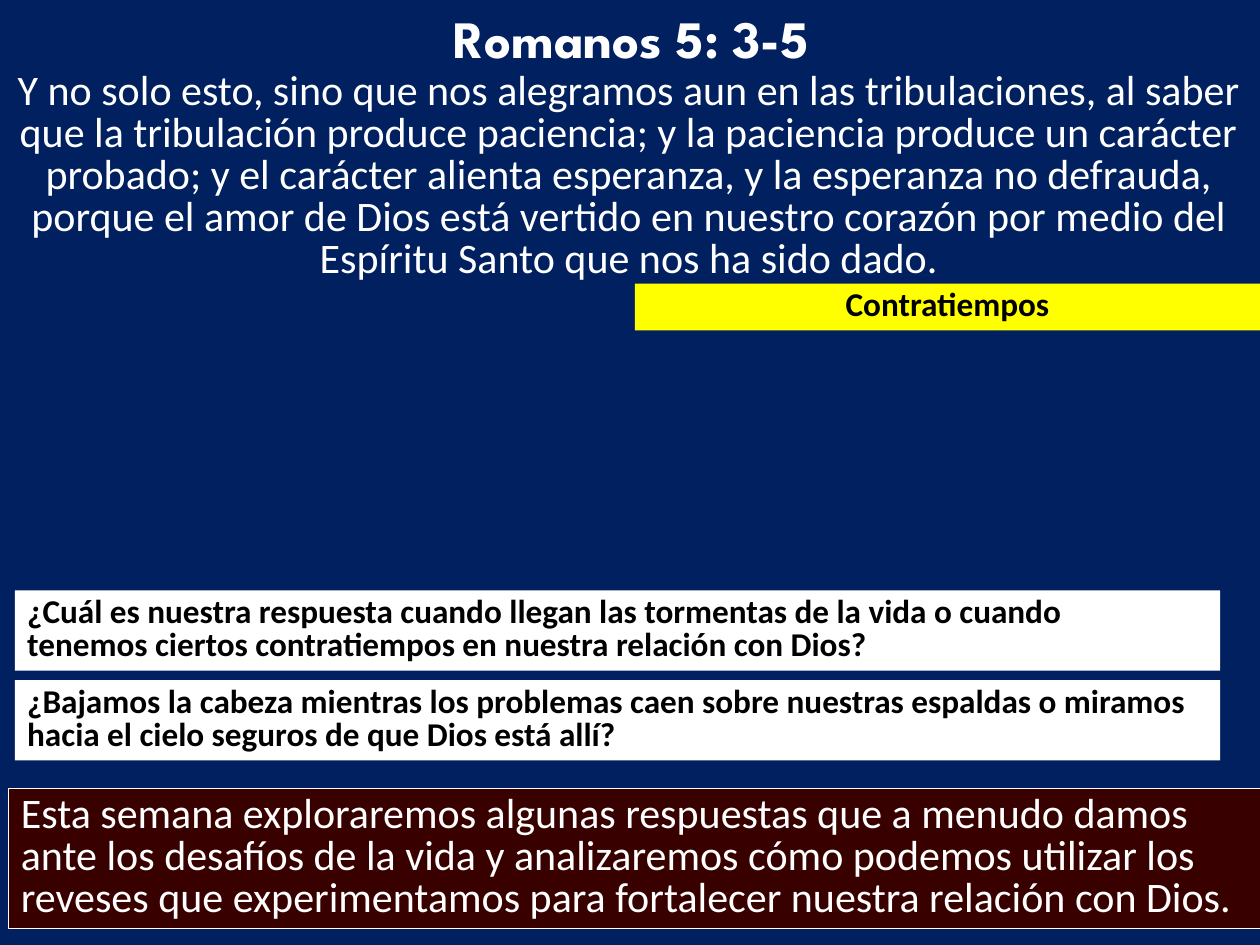
from pptx import Presentation
from pptx.dml.color import RGBColor
from pptx.enum.shapes import MSO_SHAPE
from pptx.enum.text import MSO_ANCHOR, MSO_AUTO_SIZE, PP_ALIGN
from pptx.oxml.ns import qn
from pptx.util import Cm, Pt
from lxml.etree import SubElement

NAVY = RGBColor(0x00, 0x20, 0x60)
WHITE = RGBColor(0xFF, 0xFF, 0xFF)
BLACK = RGBColor(0x00, 0x00, 0x00)
YELLOW = RGBColor(0xFF, 0xFF, 0x00)
MAROON = RGBColor(0x39, 0x00, 0x00)

HEADING = dict(name="League Spartan", size=Pt(30), bold=True, color=WHITE)
READING = dict(name="Calibri", size=Pt(24), bold=False, color=WHITE)
LABEL = dict(name="Calibri", size=Pt(19), bold=True, color=BLACK)

VERSE = [
    "Y no solo esto, sino que nos alegramos aun en las tribulaciones, al saber",
    "que la tribulación produce paciencia; y la paciencia produce un carácter "
    "probado; y el carácter alienta esperanza, y la esperanza no defrauda, "
    "porque el amor de Dios está vertido en nuestro corazón por medio del "
    "Espíritu Santo que nos ha sido dado.",
]
SUMMARY = [
    "Esta semana exploraremos algunas respuestas que a menudo damos ante los "
    "desafíos de la vida y analizaremos cómo podemos utilizar los reveses que "
    "experimentamos para fortalecer nuestra relación con Dios.",
]
QUESTIONS = [
    ["¿Cuál es nuestra respuesta cuando llegan las tormentas de la vida o cuando",
     "tenemos ciertos contratiempos en nuestra relación con Dios?"],
    ["¿Bajamos la cabeza mientras los problemas caen sobre nuestras espaldas o "
     "miramos hacia el cielo seguros de que Dios está allí?"],
]


class VerseSlide:
    def __init__(self, prs, background):
        self.s = prs.slides.add_slide(prs.slide_layouts[1])
        fill = self.s.background.fill
        fill.solid()
        fill.fore_color.rgb = background

    def set_text(self, sp, lines, style, align, spacing=None):
        tf = sp.text_frame
        frame = dict(word_wrap=True, vertical_anchor=MSO_ANCHOR.TOP,
                     auto_size=MSO_AUTO_SIZE.SHAPE_TO_FIT_TEXT,
                     margin_left=Cm(0.25), margin_right=Cm(0.25),
                     margin_top=Cm(0.13), margin_bottom=Cm(0.13))
        for key, value in frame.items():
            setattr(tf, key, value)
        for i, line in enumerate(lines):
            p = tf.paragraphs[0] if i == 0 else tf.add_paragraph()
            for key, value in dict(alignment=align, space_before=Pt(0),
                                   line_spacing=spacing).items():
                setattr(p, key, value)
            r = p.add_run()
            r.text = line
            for key, value in style.items():
                if key == "color":
                    r.font.color.rgb = value
                else:
                    setattr(r.font, key, value)

    def place(self, sp, box):
        for key, value in zip(("left", "top", "width", "height"), box):
            setattr(sp, key, Cm(value))

    def title(self, text, box):
        sp = self.s.shapes.title
        self.place(sp, box)
        self.set_text(sp, [text], HEADING, PP_ALIGN.CENTER)

    def body(self, lines, box):
        sp = self.s.placeholders[1]
        self.place(sp, box)
        self.set_text(sp, lines, READING, PP_ALIGN.CENTER, READING["size"])
        for p in sp.text_frame.paragraphs:
            pPr = p._p.get_or_add_pPr()
            pPr.set("marL", "0")
            pPr.set("indent", "0")
            SubElement(pPr, qn("a:buNone"))

    def panel(self, lines, box, fill, style, align=PP_ALIGN.LEFT, line=None):
        sp = self.s.shapes.add_shape(MSO_SHAPE.RECTANGLE, *map(Cm, box))
        sp.shadow.inherit = False
        sp.fill.solid()
        sp.fill.fore_color.rgb = fill
        if line is None:
            sp.line.fill.background()
        else:
            sp.line.color.rgb = line
            sp.line.width = Pt(0.75)
        self.set_text(sp, lines, style, align, style["size"])


def main():
    prs = Presentation()
    prs.slide_width, prs.slide_height = Cm(25.4), Cm(19.05)
    slide = VerseSlide(prs, NAVY)
    slide.title("Romanos 5: 3-5", (6.83, 0, 11.8, 1.54))
    slide.body(VERSE, (0, 1.32, 25.35, 4.55))
    slide.panel(["Contratiempos"], (12.8, 5.72, 12.6, 0.94), YELLOW, LABEL,
                PP_ALIGN.CENTER)
    slide.panel(SUMMARY, (0.17, 15.89, 25.27, 2.83), MAROON, READING, line=WHITE)
    for i, question in enumerate(QUESTIONS):
        slide.panel(question, (0.3, 11.9 + 1.81 * i, 24.3, 1.62), WHITE, LABEL)
    prs.save("out.pptx")


if __name__ == "__main__":
    main()
